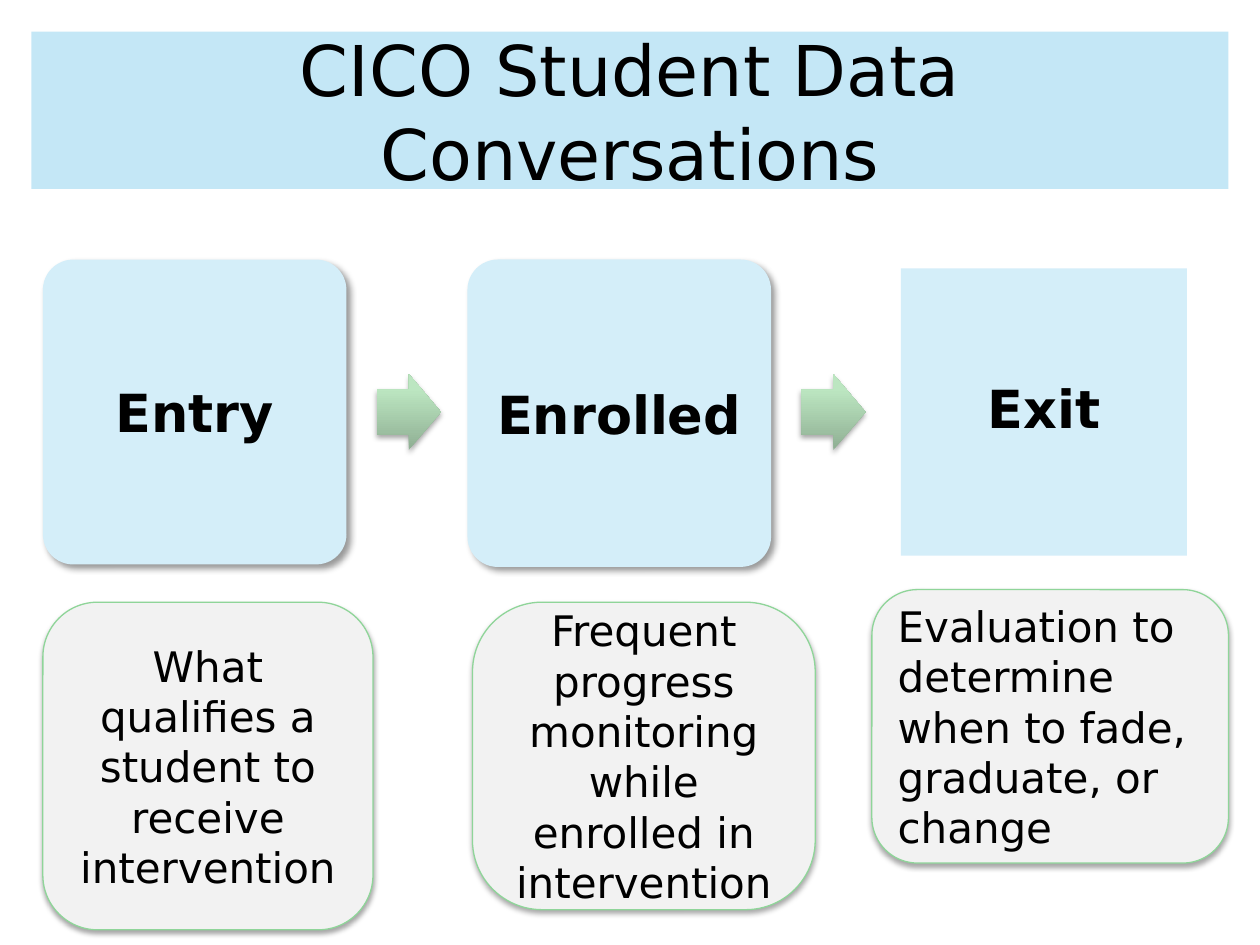
from copy import deepcopy
from typing import NamedTuple, Optional

from lxml.etree import SubElement
from pptx import Presentation
from pptx.dml.color import RGBColor
from pptx.enum.shapes import MSO_SHAPE
from pptx.enum.text import MSO_ANCHOR, PP_ALIGN
from pptx.oxml.ns import qn
from pptx.util import Pt

PX = 9144  # 100 px to the inch
FONT = "DejaVu Sans"
BLACK = RGBColor(0x00, 0x00, 0x00)
BANNER_BLUE = RGBColor(0xA9, 0xDC, 0xF2)
STAGE_BLUE = RGBColor(0xD4, 0xEE, 0xF9)
NOTE_GRAY = RGBColor(0xF2, 0xF2, 0xF2)
NOTE_GREEN = RGBColor(0x8F, 0xD5, 0x99)
ARROW_STOPS = (
    (0, RGBColor(0x8F, 0xAF, 0x93)),
    (0.8, RGBColor(0xBC, 0xE6, 0xC1)),
    (1, RGBColor(0xBC, 0xE8, 0xC1)),
)


class Box(NamedTuple):
    left: int
    top: int
    width: int
    height: int


class Shadow(NamedTuple):
    opacity: int
    blur: float
    distance: float
    angle: int


class Stage(NamedTuple):
    name: str
    box: Box
    kind: MSO_SHAPE
    shadow: Optional[Shadow]
    inset: int
    line_spacing: float


class Note(NamedTuple):
    wording: str
    box: Box
    rounding: float
    align: PP_ALIGN


STAGE_SHADOW = Shadow(40, 4, 3, 45)
SOFT_SHADOW = Shadow(35, 3.1, 1.8, 90)

STAGES = (
    Stage("Entry", Box(34, 206, 241, 242), MSO_SHAPE.ROUNDED_RECTANGLE, STAGE_SHADOW, 10, 1.0),
    Stage("Enrolled", Box(371, 206, 241, 244), MSO_SHAPE.ROUNDED_RECTANGLE, STAGE_SHADOW, 10, 1.0),
    Stage("Exit", Box(715, 213, 227, 228), MSO_SHAPE.RECTANGLE, None, 23, 0.9),
)
ARROWS = tuple(Box(left, 297, 51, 60) for left in (299, 636))
NOTES = (
    Note("What qualifies a student to receive intervention",
         Box(34, 478, 262, 260), 0.167, PP_ALIGN.CENTER),
    Note("Frequent progress monitoring while enrolled in intervention",
         Box(375, 478, 272, 244), 0.226, PP_ALIGN.CENTER),
    Note("Evaluation to determine when to fade, graduate, or change",
         Box(692, 468, 283, 217), 0.167, PP_ALIGN.LEFT),
)


def add_plain_shape(slide, kind: MSO_SHAPE, box: Box, color: Optional[RGBColor] = None):
    """Add a shape without outline or shadow, filled if a color is given."""
    shape = slide.shapes.add_shape(kind, *(length * PX for length in box))
    shape.line.fill.background()
    shape.shadow.inherit = False
    if color is not None:
        shape.fill.solid()
        shape.fill.fore_color.rgb = color
    return shape


def set_opacity(color_element, percent: int) -> None:
    SubElement(color_element, qn("a:alpha"), val=str(percent * 1000))


def cast_shadow(shape, shadow: Shadow) -> None:
    effects = shape._element.spPr.find(qn("a:effectLst"))
    outer = SubElement(
        effects, qn("a:outerShdw"),
        blurRad=str(int(Pt(shadow.blur))), dist=str(int(Pt(shadow.distance))),
        dir=str(shadow.angle * 60000), rotWithShape="0",
    )
    set_opacity(SubElement(outer, qn("a:srgbClr"), val=str(BLACK)), shadow.opacity)


def write(shape, wording: str, size: int, bold: bool = False,
          align: PP_ALIGN = PP_ALIGN.CENTER, inset_x: int = 10, inset_y: int = 5,
          line_spacing: float = 1.0) -> None:
    frame = shape.text_frame
    frame.text = wording
    frame.word_wrap = True
    frame.vertical_anchor = MSO_ANCHOR.MIDDLE
    frame.margin_left = frame.margin_right = inset_x * PX
    frame.margin_top = frame.margin_bottom = inset_y * PX
    paragraph = frame.paragraphs[0]
    paragraph.alignment = align
    paragraph.line_spacing = line_spacing
    font = paragraph.runs[0].font
    font.name = FONT
    font.size = Pt(size)
    font.bold = bold
    font.color.rgb = BLACK


def draw_banner(slide) -> None:
    banner = add_plain_shape(slide, MSO_SHAPE.RECTANGLE, Box(25, 25, 950, 125), BANNER_BLUE)
    set_opacity(banner._element.spPr.find(qn("a:solidFill"))[0], 68)
    write(banner, "CICO Student Data Conversations", 40)


def draw_stage(slide, stage: Stage) -> None:
    card = add_plain_shape(slide, stage.kind, stage.box, STAGE_BLUE)
    if stage.kind == MSO_SHAPE.ROUNDED_RECTANGLE:
        card.adjustments[0] = 0.1
    if stage.shadow:
        cast_shadow(card, stage.shadow)
    write(card, stage.name, 30, bold=True, inset_x=stage.inset, inset_y=stage.inset,
          line_spacing=stage.line_spacing)


def draw_arrow(slide, box: Box) -> None:
    arrow = add_plain_shape(slide, MSO_SHAPE.RIGHT_ARROW, box)
    arrow.adjustments[0] = 0.6
    arrow.adjustments[1] = 0.5
    arrow.fill.gradient()
    arrow.fill.gradient_angle = 90
    stop_list = arrow._element.spPr.find(qn("a:gradFill")).find(qn("a:gsLst"))
    stop_list.append(deepcopy(stop_list[0]))
    for stop, (position, color) in zip(arrow.fill.gradient_stops, ARROW_STOPS):
        stop.position = position
        stop.color.rgb = color
    cast_shadow(arrow, SOFT_SHADOW)


def draw_note(slide, note: Note) -> None:
    card = add_plain_shape(slide, MSO_SHAPE.ROUNDED_RECTANGLE, note.box, NOTE_GRAY)
    card.adjustments[0] = note.rounding
    card.line.color.rgb = NOTE_GREEN
    card.line.width = Pt(0.75)
    cast_shadow(card, SOFT_SHADOW)
    write(card, note.wording, 24, align=note.align)


def main() -> None:
    presentation = Presentation()
    presentation.slide_width = 1000 * PX
    presentation.slide_height = 750 * PX
    slide = presentation.slides.add_slide(presentation.slide_layouts[6])
    draw_banner(slide)
    for stage in STAGES:
        draw_stage(slide, stage)
    for arrow_box in ARROWS:
        draw_arrow(slide, arrow_box)
    for note in NOTES:
        draw_note(slide, note)
    presentation.save("out.pptx")


if __name__ == "__main__":
    main()
